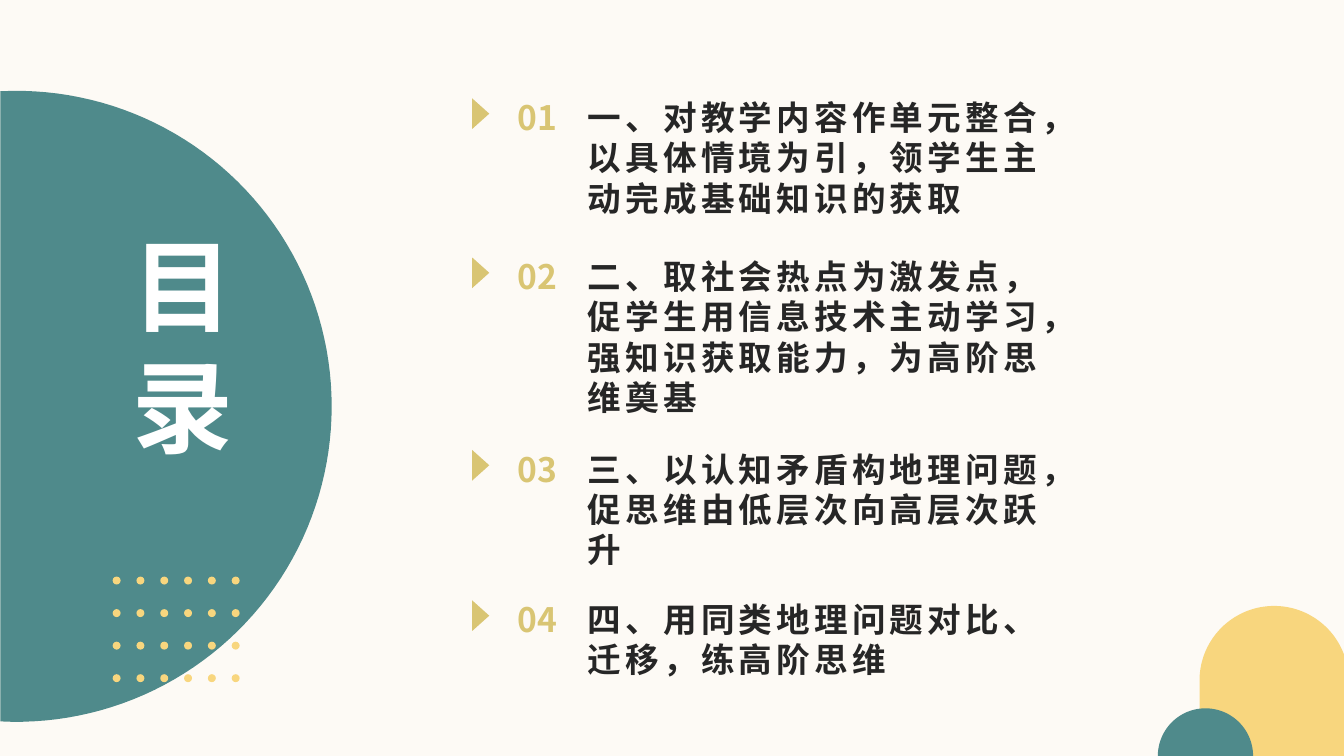
from math import cos, radians, sin

from lxml.etree import SubElement
from pptx import Presentation
from pptx.dml.color import RGBColor
from pptx.enum.shapes import MSO_SHAPE as SHAPE
from pptx.enum.text import MSO_ANCHOR as ANCHOR, MSO_AUTO_SIZE as AUTO, PP_ALIGN as ALIGN
from pptx.oxml.ns import qn
from pptx.util import Cm, Pt

COLORS = {
    "cream": "FDFAF5",
    "teal": "4F8A8B",
    "yellow": "F8D67E",
    "gold": "D9C573",
    "ink": "262626",
    "white": "FFFFFF",
}
TOPICS = [
    (2.44, "一、对教学内容作单元整合，以具体情境为引，领学生主动完成基础知识的获取"),
    (6.45, "二、取社会热点为激发点，促学生用信息技术主动学习，强知识获取能力，为高阶思维奠基"),
    (11.3, "三、以认知矛盾构地理问题，促思维由低层次向高层次跃升"),
    (15.09, "四、用同类地理问题对比、迁移，练高阶思维"),
]


def arc(cx, cy, radius, start, end, steps=90):
    """Return points along a circular arc, angles in degrees clockwise from the right."""
    angles = [radians(start + (end - start) * i / steps) for i in range(steps + 1)]
    return [(cx + radius * cos(a), cy + radius * sin(a)) for a in angles]


class AgendaSlide:
    """Draw the elements of the agenda slide in one style; lengths are centimetres."""

    font = "Noto Sans CJK SC"

    def __init__(self, prs):
        """Add a title-only slide with a cream background."""
        self.s = prs.slides.add_slide(prs.slide_layouts[5])
        self.paint(self.s.background, "cream")

    def paint(self, target, color):
        """Fill a shape or background with a named colour."""
        target.fill.solid()
        target.fill.fore_color.rgb = RGBColor.from_string(COLORS[color])

    def finish(self, sp, color):
        """Give a shape a flat fill without outline or shadow."""
        self.paint(sp, color)
        sp.line.fill.background()
        sp.shadow.inherit = False

    def shape(self, kind, x, y, w, h, color, rotation=0):
        """Add a preset shape."""
        sp = self.s.shapes.add_shape(kind, Cm(x), Cm(y), Cm(w), Cm(h))
        sp.rotation = rotation
        self.finish(sp, color)

    def outline(self, points, color):
        """Add a closed freeform."""
        pts = [(Cm(x), Cm(y)) for x, y in points]
        builder = self.s.shapes.build_freeform(*pts[0])
        builder.add_line_segments(pts[1:], close=True)
        self.finish(builder.convert_to_shape(), color)

    def set_text(self, sp, text, size, color, align, font=font, spacing=0, wrap=True):
        """Fill a text shape and format its single run."""
        tf = sp.text_frame
        tf.text = text
        tf.word_wrap = wrap
        tf.auto_size = AUTO.NONE
        tf.margin_left = tf.margin_right = tf.margin_top = tf.margin_bottom = 0
        p = tf.paragraphs[0]
        p.alignment = align
        p.line_spacing = Pt(size * 1.2)
        r = p.runs[0]
        r.font.size = Pt(size)
        r.font.bold = True
        r.font.color.rgb = RGBColor.from_string(COLORS[color])
        r.font.name = font
        props = r._r.get_or_add_rPr()
        SubElement(props, qn("a:ea")).set("typeface", self.font)
        if spacing:
            props.set("spc", str(spacing * 100))

    def textbox(self, x, y, w, h, text, **style):
        """Add a text box."""
        sp = self.s.shapes.add_textbox(Cm(x), Cm(y), Cm(w), Cm(h))
        self.set_text(sp, text, 24, **style)

    def title(self, x, y, w, h, text):
        """Place the title placeholder in front of the shapes drawn so far."""
        sp = self.s.shapes.title
        sp.left, sp.top, sp.width, sp.height = Cm(x), Cm(y), Cm(w), Cm(h)
        self.set_text(sp, text, 72, "white", ALIGN.RIGHT, font="Arial")
        sp.text_frame.vertical_anchor = ANCHOR.MIDDLE
        self.s.shapes._spTree.append(sp._element)

    def topic(self, number, y, text):
        """Add one agenda row: marker, number and text."""
        self.shape(SHAPE.ISOSCELES_TRIANGLE, 11.73, y + 0.21, 0.77, 0.43, "gold", 90)
        self.textbox(12.62, y, 1.83, 2.72, f"{number:02d}",
                     color="gold", align=ALIGN.CENTER, wrap=False)
        self.textbox(14.81, y, 11.68, 2.72, text,
                     color="ink", align=ALIGN.LEFT, spacing=3)


def main():
    """Build and save the agenda slide."""
    prs = Presentation()
    prs.slide_width, prs.slide_height = Cm(33.87), Cm(19.05)
    agenda = AgendaSlide(prs)

    agenda.outline(arc(0.41, 10.24, 7.95, -92.9, 92.9), "teal")
    for row in range(4):
        for col in range(6):
            agenda.shape(SHAPE.OVAL, 2.84 + 0.6 * col, 14.53 + 0.82 * row, 0.2, 0.2, "yellow")
    corner = [(33.87, 19.05), (30.23, 19.05)]
    agenda.outline(arc(32.11, 17.15, 1.88, 180, 339.4) + corner, "yellow")
    agenda.outline(arc(30.38, 19.05, 1.2, 180, 360), "teal")

    agenda.title(2.34, 4.95, 3.53, 7.47, "目录")
    for number, (y, text) in enumerate(TOPICS, 1):
        agenda.topic(number, y, text)
    prs.save("out.pptx")


if __name__ == "__main__":
    main()
